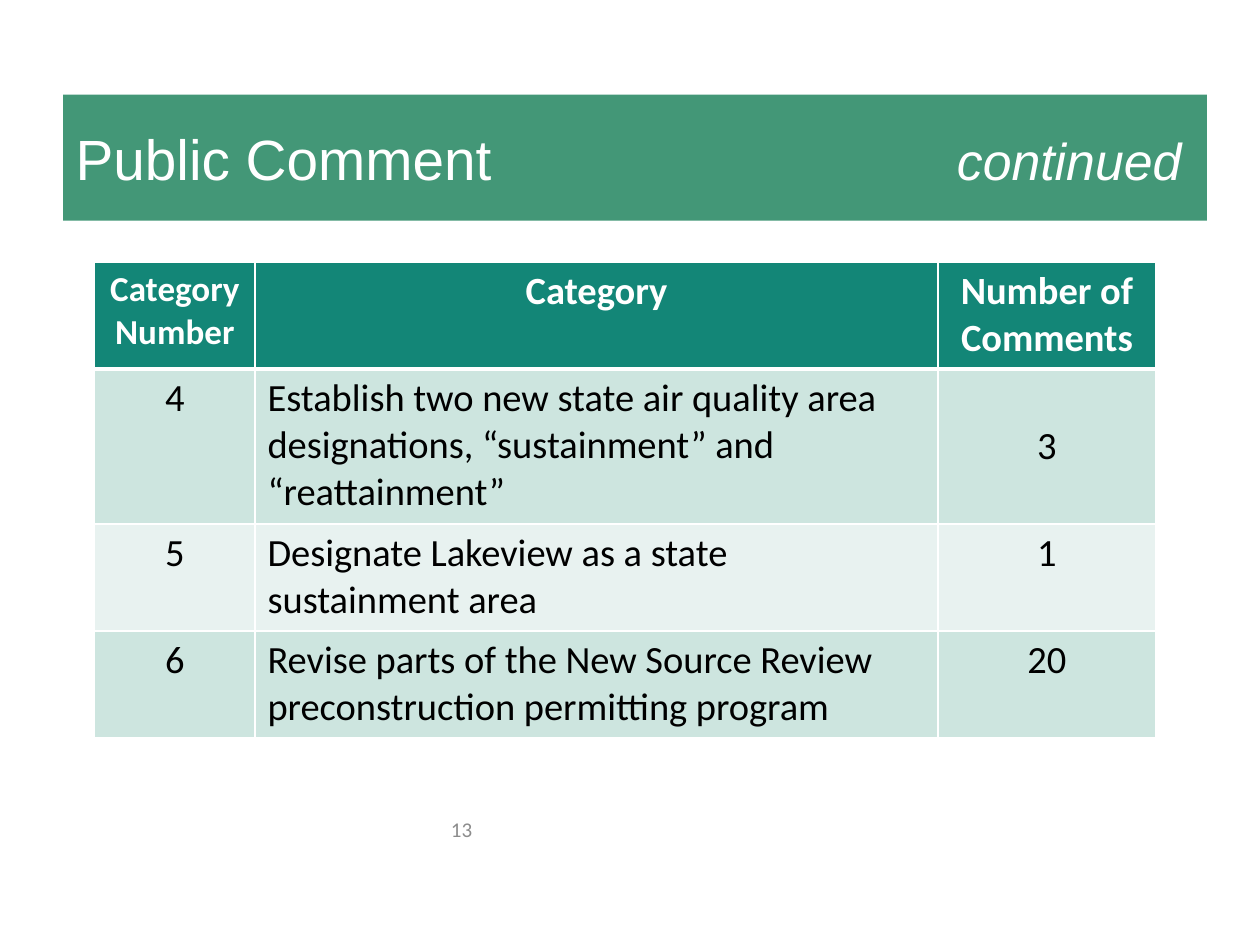
from dataclasses import dataclass

from lxml.etree import SubElement
from pptx import Presentation
from pptx.dml.color import RGBColor
from pptx.enum.text import MSO_ANCHOR, MSO_AUTO_SIZE, PP_ALIGN
from pptx.oxml.ns import qn
from pptx.util import Cm, Pt


@dataclass(frozen=True)
class Theme:
    """Colours, fonts and type sizes of the slide."""
    banner: str = "439777"
    header: str = "138677"
    bands: tuple = ("CDE5DF", "E8F2F0")
    white: str = "FFFFFF"
    black: str = "000000"
    grey: str = "8C8C8C"
    title_font: str = "Arial"
    body_font: str = "Calibri"
    title_size: float = 32.4
    aside_size: float = 29.6
    body_size: float = 22
    narrow_size: float = 20
    number_size: float = 12


THEME = Theme()
COLUMN_WIDTHS = (3.23, 13.77, 4.39)
ROW_HEIGHTS = (2.16, 3.12, 2.16, 2.16)
ROWS = (
    ("Category Number", "Category", "Number of Comments"),
    ("4", "Establish two new state air quality area designations, "
          "“sustainment” and “reattainment”", "3"),
    ("5", "Designate Lakeview as a state sustainment area", "1"),
    ("6", "Revise parts of the New Source Review preconstruction "
          "permitting program", "20"),
)


def style_font(font, name, color, size=None, bold=None):
    """Set the typeface, colour, size and weight of a font."""
    font.name = name
    font.color.rgb = RGBColor.from_string(color)
    if size:
        font.size = Pt(size)
    font.bold = bold


def fill_solid(target, color):
    """Give a shape or cell a plain fill."""
    target.fill.solid()
    target.fill.fore_color.rgb = RGBColor.from_string(color)


def add_right_tab(para, position):
    """Add a right-aligned tab stop to a paragraph."""
    properties = para._p.get_or_add_pPr()
    stops = SubElement(properties, qn("a:tabLst"))
    SubElement(stops, qn("a:tab"), pos=str(position), algn="r")


def add_banner(page, heading, aside):
    """Turn the title into a banner with an aside at its right end."""
    title = page.shapes.title
    title.left, title.top = Cm(1.27), Cm(1.91)
    title.width, title.height = Cm(23.06), Cm(2.54)
    fill_solid(title, THEME.banner)
    frame = title.text_frame
    frame.auto_size = MSO_AUTO_SIZE.NONE
    frame.vertical_anchor = MSO_ANCHOR.MIDDLE
    para = frame.paragraphs[0]
    para.alignment = PP_ALIGN.LEFT
    add_right_tab(para, Cm(22.3))
    style_font(para.font, THEME.title_font, THEME.white)
    for text, size, italic in ((heading, THEME.title_size, False),
                               ("\t" + aside, THEME.aside_size, True)):
        span = para.add_run()
        span.text = text
        span.font.size = Pt(size)
        span.font.italic = italic


def set_borders(cell, widths):
    """Draw white cell borders, given as widths by side."""
    properties = cell._tc.get_or_add_tcPr()
    for side, width in widths.items():
        line = SubElement(properties, qn(f"a:ln{side}"), w=str(Pt(width)))
        fill = SubElement(line, qn("a:solidFill"))
        SubElement(fill, qn("a:srgbClr"), val=THEME.white)


def format_cell(cell, text, row, column):
    """Write one table cell and style it by its row and column."""
    is_header = row == 0
    set_borders(cell, {"L": 1, "R": 1, "T": 3 if row == 1 else 1,
                       "B": 3 if is_header else 1})
    fill_solid(cell, THEME.header if is_header else THEME.bands[(row - 1) % 2])
    cell.text = text
    para = cell.text_frame.paragraphs[0]
    is_wording = column == 1 and not is_header
    para.alignment = PP_ALIGN.LEFT if is_wording else PP_ALIGN.CENTER
    is_narrow = is_header and column == 0
    style_font(para.font, THEME.body_font,
               THEME.white if is_header else THEME.black,
               THEME.narrow_size if is_narrow else THEME.body_size, is_header)


def add_comment_table(page):
    """Add the table of comment categories."""
    frame = page.shapes.add_table(
        len(ROWS), len(COLUMN_WIDTHS), Cm(1.91), Cm(5.28),
        Cm(sum(COLUMN_WIDTHS)), Cm(sum(ROW_HEIGHTS)))
    table = frame.table
    for column, width in zip(table.columns, COLUMN_WIDTHS):
        column.width = Cm(width)
    for row, height in zip(table.rows, ROW_HEIGHTS):
        row.height = Cm(height)
    for row, texts in enumerate(ROWS):
        for column, text in enumerate(texts):
            format_cell(table.cell(row, column), text, row, column)
    table.cell(1, 2).vertical_anchor = MSO_ANCHOR.MIDDLE


def add_page_number(page, number):
    """Add the page number below the table."""
    box = page.shapes.add_textbox(Cm(5.28), Cm(16.2), Cm(8.05), Cm(1.02))
    frame = box.text_frame
    frame.word_wrap = True
    frame.vertical_anchor = MSO_ANCHOR.MIDDLE
    para = frame.paragraphs[0]
    para.text = number
    para.alignment = PP_ALIGN.CENTER
    style_font(para.font, THEME.body_font, THEME.grey, THEME.number_size)


def main():
    """Build the slide and save the deck."""
    deck = Presentation()
    deck.slide_width, deck.slide_height = Cm(25.4), Cm(19.05)
    page = deck.slides.add_slide(deck.slide_layouts.get_by_name("Title Only"))
    add_banner(page, "Public Comment", "continued")
    add_comment_table(page)
    add_page_number(page, "13")
    deck.save("out.pptx")


if __name__ == "__main__":
    main()
